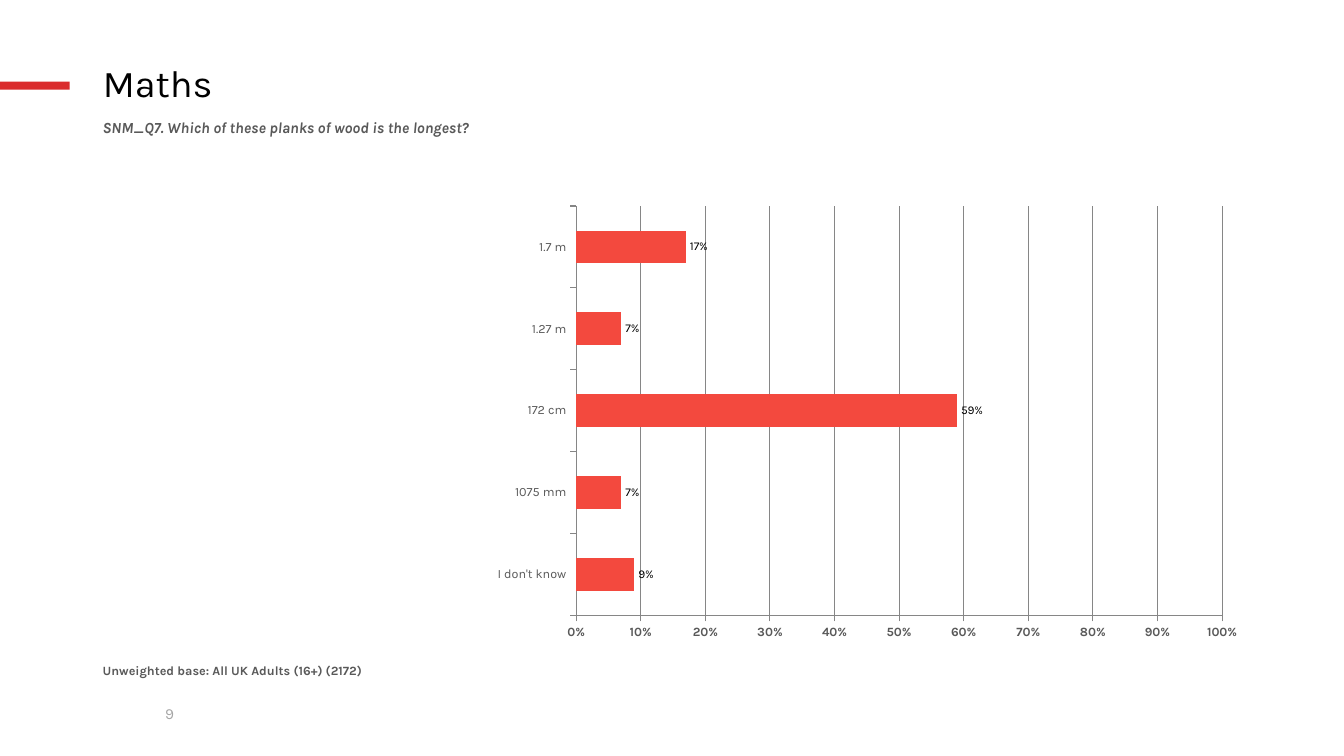
import pptx
import pptx.chart.data
import pptx.dml.color
import pptx.enum.chart
import pptx.enum.shapes
import pptx.enum.text
import pptx.oxml
import pptx.oxml.ns
import pptx.util
from pptx.util import Inches

FONT = "Karla"
GREY = "595959"
LEFT, WIDTH = 0.92, 11.5
ANSWERS = {"I don't know": 0.09, "1075 mm": 0.07, "172 cm": 0.59, "1.27 m": 0.07, "1.7 m": 0.17}
PLOT_AREA = {"x": 0.417, "y": 0.034, "w": 0.557, "h": 0.897}


def rgb(hex_colour):
    """Turn a hex string into a colour."""
    return pptx.dml.color.RGBColor.from_string(hex_colour)


def style_font(font, size, colour, bold=False, italic=False):
    """Apply the deck's typeface with a size, colour and emphasis."""
    font.name = FONT
    font.size = pptx.util.Pt(size)
    font.color.rgb = rgb(colour)
    font.bold = bold
    font.italic = italic


def fill_text(holder, text, size, colour, bold=False, italic=False):
    """Write one wrapped, left-aligned paragraph into a shape."""
    frame = holder.text_frame
    frame.text = text
    frame.word_wrap = True
    paragraph = frame.paragraphs[0]
    paragraph.alignment = pptx.enum.text.PP_ALIGN.LEFT
    style_font(paragraph.runs[0].font, size, colour, bold, italic)


def add_title(slide, text):
    """Place and format the title placeholder."""
    title = slide.shapes.title
    title.left, title.top = Inches(LEFT), Inches(0.59)
    title.width, title.height = Inches(WIDTH), Inches(0.51)
    fill_text(title, text, 27, "000000")
    title.text_frame.vertical_anchor = pptx.enum.text.MSO_ANCHOR.MIDDLE
    title.text_frame.paragraphs[0].line_spacing = 0.9


def add_text(slide, box, text, size, colour, bold=False, italic=False):
    """Add a text box at left, top, width, height in inches."""
    holder = slide.shapes.add_textbox(*map(Inches, box))
    fill_text(holder, text, size, colour, bold, italic)


def add_accent(slide):
    """Add the red bar beside the title."""
    accent = slide.shapes.add_shape(
        pptx.enum.shapes.MSO_SHAPE.RECTANGLE, 0, Inches(0.81), Inches(0.69), Inches(0.08))
    accent.shadow.inherit = False
    accent.fill.solid()
    accent.fill.fore_color.rgb = rgb("DA2C2D")
    accent.line.fill.background()


def style_axis(axis, bold=False):
    """Format an axis with low labels and outside ticks."""
    axis.tick_label_position = pptx.enum.chart.XL_TICK_LABEL_POSITION.LOW
    axis.major_tick_mark = pptx.enum.chart.XL_TICK_MARK.OUTSIDE
    axis.minor_tick_mark = pptx.enum.chart.XL_TICK_MARK.NONE
    style_font(axis.tick_labels.font, 9, GREY, bold)
    style_line(axis.format.line)


def style_line(line):
    """Draw a thin grey chart line."""
    line.color.rgb = rgb("868686")
    line.width = pptx.util.Pt(0.75)


def fix_plot_area(chart):
    """Set the inner plot area as fractions of the chart."""
    plot_area = chart.element.chart.plotArea
    for layout in plot_area.findall(pptx.oxml.ns.qn("c:layout")):
        plot_area.remove(layout)
    modes = '<c:layoutTarget val="inner"/><c:xMode val="edge"/><c:yMode val="edge"/>'
    sizes = "".join(f'<c:{key} val="{value}"/>' for key, value in PLOT_AREA.items())
    plot_area.insert(0, pptx.oxml.parse_xml(
        f'<c:layout {pptx.oxml.ns.nsdecls("c")}>'
        f"<c:manualLayout>{modes}{sizes}</c:manualLayout></c:layout>"))


def add_answer_chart(slide):
    """Add the bar chart of answer shares."""
    answers = pptx.chart.data.CategoryChartData(number_format="0%")
    answers.categories = list(ANSWERS)
    answers.add_series("Series 1", list(ANSWERS.values()))
    chart = slide.shapes.add_chart(
        pptx.enum.chart.XL_CHART_TYPE.BAR_CLUSTERED,
        Inches(LEFT), Inches(1.89), Inches(WIDTH), Inches(4.53), answers).chart
    chart.has_legend = False
    chart.has_title = False
    style_font(chart.font, 18, "000000")
    fix_plot_area(chart)

    style_axis(chart.category_axis)
    shares = chart.value_axis
    style_axis(shares, bold=True)
    shares.minimum_scale, shares.maximum_scale, shares.major_unit = 0, 1, 0.1
    shares.tick_labels.number_format = "0%"
    shares.tick_labels.number_format_is_linked = False
    shares.has_major_gridlines = True
    style_line(shares.major_gridlines.format.line)

    plot = chart.plots[0]
    plot.gap_width, plot.overlap = 150, -10
    plot.vary_by_categories = False
    bars = plot.series[0]
    bars.format.fill.solid()
    bars.format.fill.fore_color.rgb = rgb("F3493E")
    labels = bars.data_labels
    labels.show_value = True
    labels.position = pptx.enum.chart.XL_LABEL_POSITION.OUTSIDE_END
    labels.number_format = "0%"
    labels.number_format_is_linked = False
    style_font(labels.font, 8.5, "000000")


def main():
    """Build and save the slide."""
    deck = pptx.Presentation()
    deck.slide_width, deck.slide_height = Inches(13.33), Inches(7.5)
    slide = deck.slides.add_slide(deck.slide_layouts.get_by_name("Title Only"))
    add_accent(slide)
    add_title(slide, "Maths")
    add_text(slide, (LEFT, 1.12, WIDTH, 0.66),
             "SNM_Q7. Which of these planks of wood is the longest?", 11, GREY, True, True)
    add_answer_chart(slide)
    add_text(slide, (LEFT, 6.53, WIDTH, 0.43),
             "Unweighted base: All UK Adults (16+) (2172)", 9, GREY, True)
    add_text(slide, (1.54, 6.94, 0.68, 0.29), "9", 11, "A6A6A6")
    deck.save("out.pptx")


if __name__ == "__main__":
    main()
